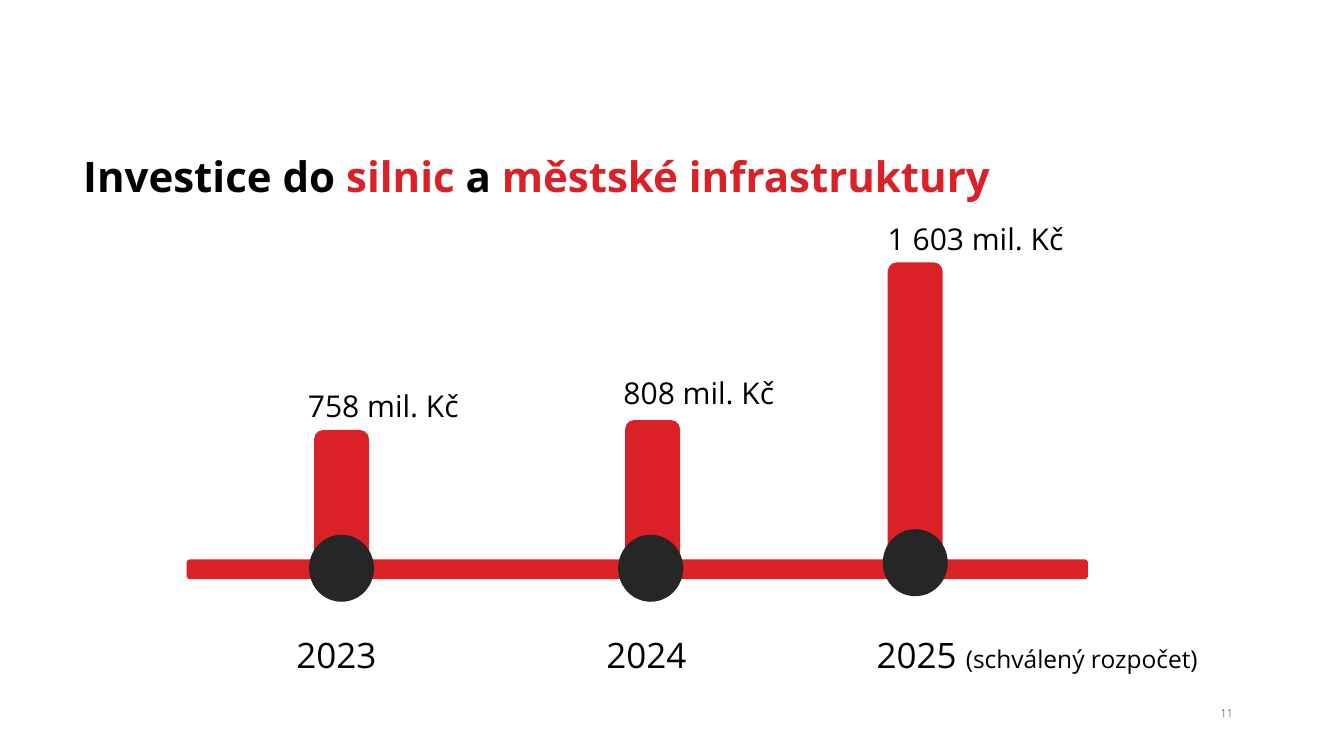
from dataclasses import dataclass
from pptx import Presentation
from pptx import util as u
from pptx.dml.color import RGBColor
from pptx.enum import shapes, text


@dataclass(frozen=True)
class Theme:
    font: str = "Open Sans"
    red: str = "DA2128"
    dark: str = "262626"
    black: str = "000000"
    grey: str = "808285"
    title: float = 60
    year: float = 50
    value: float = 42.9
    note: float = 35
    number: float = 16


theme = Theme()
deck = Presentation()
deck.slide_width, deck.slide_height = u.Inches(26.66), u.Inches(15)
page = deck.slides.add_slide(deck.slide_layouts[6])


def grid(left, top, width, height):
    """Turn percentages of the slide's width and height into lengths."""
    column, row = deck.slide_width / 100, deck.slide_height / 100
    return [round(length) for length in (left * column, top * row, width * column, height * row)]


def add_item(place, kind=None, fill=None, spans=(), wrap=True, inset=True,
             anchor=text.MSO_ANCHOR.TOP, align=text.PP_ALIGN.LEFT):
    """Add a filled shape, or a text box of (words, size, colour, bold) spans."""
    if kind is not None:
        shape = page.shapes.add_shape(kind, *grid(*place))
        shape.shadow.inherit = False
        shape.fill.solid()
        shape.fill.fore_color.rgb = RGBColor.from_string(fill)
        shape.line.fill.background()
        return
    frame = page.shapes.add_textbox(*grid(*place)).text_frame
    frame.word_wrap = wrap
    frame.vertical_anchor = anchor
    if inset:
        frame.auto_size = text.MSO_AUTO_SIZE.SHAPE_TO_FIT_TEXT
    else:
        frame.margin_left = frame.margin_right = frame.margin_top = frame.margin_bottom = 0
    para = frame.paragraphs[0]
    para.alignment = align
    for words, size, colour, bold in spans:
        span = para.add_run()
        span.text = words
        span.font.name, span.font.size, span.font.bold = theme.font, u.Pt(size), bold
        span.font.color.rgb = RGBColor.from_string(colour)


title_spans = [
    (words, theme.title, colour, True)
    for words, colour in (("Investice do ", theme.black), ("silnic ", theme.red),
                          ("a ", theme.black), ("městské infrastruktury", theme.red))
]
add_item((6.19, 12.73, 85.56, 13.87), spans=title_spans, inset=False, anchor=text.MSO_ANCHOR.BOTTOM)
add_item((86.12, 91.6, 5.63, 5.33), spans=[("11", theme.number, theme.grey, False)],
         inset=False, anchor=text.MSO_ANCHOR.MIDDLE, align=text.PP_ALIGN.RIGHT)

# Bar heights are proportional to the amounts in millions
bar_foot, tallest, largest = 76.77, 42.07, 1603
for left, amount in ((23.37, 758), (46.51, 808), (66.05, 1603)):
    height = tallest * amount / largest
    add_item((left, bar_foot - height, 4.09, height), shapes.MSO_SHAPE.ROUNDED_RECTANGLE, theme.red)

add_item((13.88, 74, 67.07, 2.6), shapes.MSO_SHAPE.ROUNDED_RECTANGLE, theme.red)

for left, width, year, note in ((21.68, 10.54, "2023", ""), (44.75, 10.54, "2024", ""),
                                (64.85, 34.1, "2025 ", "(schválený rozpočet)")):
    year_spans = [(year, theme.year, theme.black, False)]
    if note:
        year_spans.append((note, theme.note, theme.black, False))
    add_item((left, 83.53, width, 6.27), spans=year_spans)

for left, top in ((22.99, 70.73), (45.99, 70.73), (65.68, 70)):
    add_item((left, top, 4.84, 8.87), shapes.MSO_SHAPE.OVAL, theme.dark)

for place, label in (((22.54, 50.87, 13.02, 5.47), "758 mil. Kč"),
                     ((46.02, 49.27, 13.02, 5.47), "808 mil. Kč"),
                     ((65.68, 28.8, 14.93, 8.87), "1 603 mil. Kč")):
    add_item(place, spans=[(label, theme.value, theme.black, False)], wrap=False)

deck.save("out.pptx")
